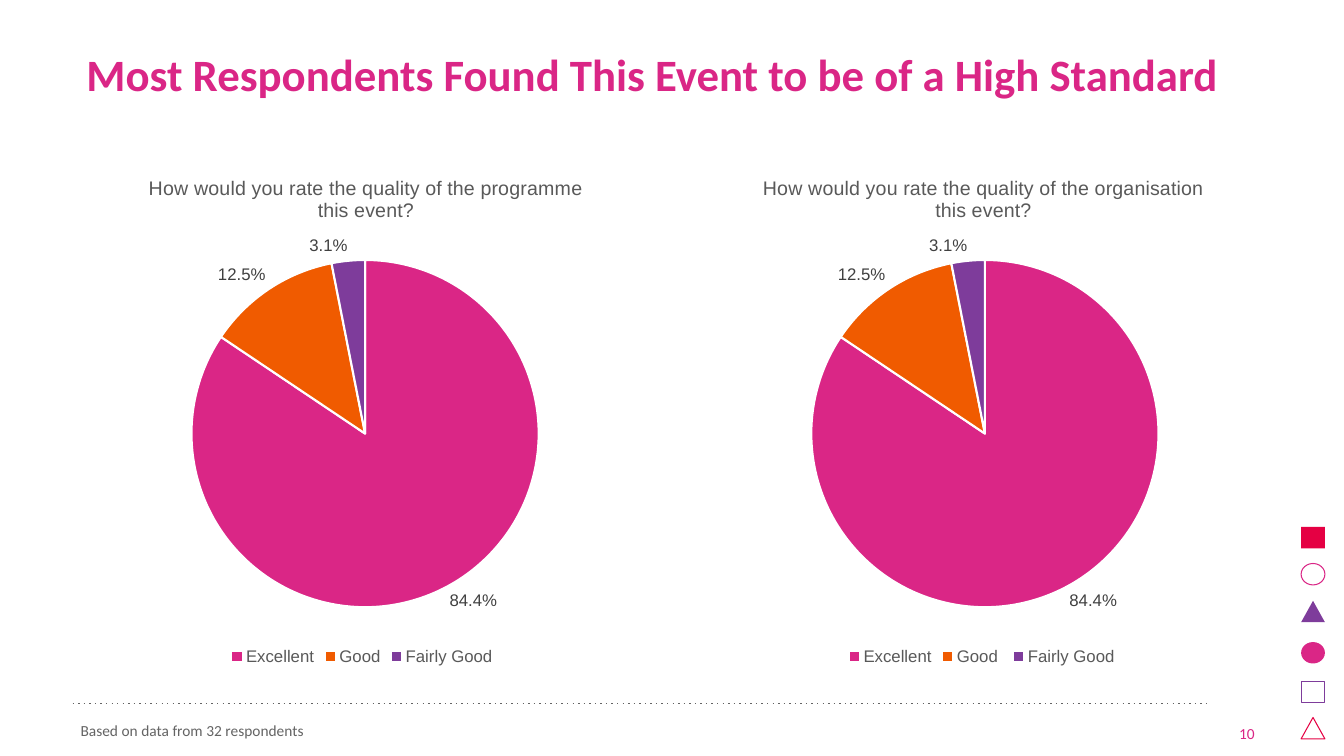
from dataclasses import dataclass

from lxml.etree import SubElement
from pptx import Presentation
from pptx.chart.data import CategoryChartData
from pptx.dml.color import RGBColor
from pptx.enum.chart import XL_CHART_TYPE as ChartType
from pptx.enum.chart import XL_LABEL_POSITION as LabelPosition
from pptx.enum.chart import XL_LEGEND_POSITION as LegendPosition
from pptx.enum.shapes import MSO_CONNECTOR as Connector
from pptx.enum.shapes import MSO_SHAPE as Preset
from pptx.enum.text import MSO_ANCHOR as Anchor
from pptx.enum.text import PP_ALIGN as Align
from pptx.oxml.ns import qn
from pptx.slide import Slide
from pptx.util import Cm, Pt

PINK, ORANGE, PURPLE, RED = "DA2686", "F05B00", "7E3C9B", "E50043"
GREY, CHART_GREY, LABEL_GREY, WHITE = "646464", "595959", "404040", "FFFFFF"


@dataclass
class Rating:
    question: str
    left: float
    title_x: float
    shares: dict[str, float]


@dataclass
class Ornament:
    preset: Preset
    top: float
    colour: str
    filled: bool


RATINGS = [
    Rating("How would you rate the quality of the programme this event?", 1.93, 0.12,
           {"Excellent": 0.844, "Good": 0.125, "Fairly Good": 0.031}),
    Rating("How would you rate the quality of the organisation this event?", 17.55, 0.11,
           {"Excellent": 0.844, "Good ": 0.125, "Fairly Good": 0.031}),
]
ORNAMENTS = [
    Ornament(Preset.RECTANGLE, 13.28, RED, True),
    Ornament(Preset.OVAL, 14.2, PINK, False),
    Ornament(Preset.ISOSCELES_TRIANGLE, 15.14, PURPLE, True),
    Ornament(Preset.OVAL, 16.18, PINK, True),
    Ornament(Preset.RECTANGLE, 17.17, PURPLE, False),
    Ornament(Preset.ISOSCELES_TRIANGLE, 18.08, RED, False),
]


def rgb(colour: str) -> RGBColor:
    return RGBColor.from_string(colour)


def style_font(font, size: float, colour: str, name: str = "Arial", bold: bool = False) -> None:
    font.name, font.size, font.bold = name, Pt(size), bold
    font.color.rgb = rgb(colour)


def add_text(slide: Slide, text: str, left: float, top: float, width: float, height: float, *,
             size: float, colour: str, bold: bool = False, anchor: Anchor = Anchor.BOTTOM,
             align: Align = Align.LEFT) -> None:
    frame = slide.shapes.add_textbox(Cm(left), Cm(top), Cm(width), Cm(height)).text_frame
    frame.word_wrap = True
    frame.vertical_anchor = anchor
    paragraph = frame.paragraphs[0]
    paragraph.alignment = align
    run = paragraph.add_run()
    run.text = text
    style_font(run.font, size, colour, "Calibri", bold)


def add_ornament(slide: Slide, ornament: Ornament) -> None:
    mark = slide.shapes.add_shape(ornament.preset, Cm(32.79), Cm(ornament.top), Cm(0.6), Cm(0.54))
    mark.shadow.inherit = False
    if ornament.filled:
        mark.fill.solid()
        mark.fill.fore_color.rgb = rgb(ornament.colour)
        mark.line.fill.background()
    else:
        mark.fill.background()
        mark.line.color.rgb = rgb(ornament.colour)
        mark.line.width = Pt(0.75)


def add_footer_rule(slide: Slide) -> None:
    rule = slide.shapes.add_connector(Connector.STRAIGHT, Cm(1.83), Cm(17.73), Cm(30.45), Cm(17.73))
    rule.line.color.rgb = rgb(GREY)
    rule.line.width = Pt(1)
    properties = rule._element.spPr
    SubElement(properties.find(qn("a:ln")), qn("a:prstDash"), val="dot")
    SubElement(properties, qn("a:effectLst"))


def place(element, **fractions: float) -> None:
    """Fix the position of a chart part as fractions of the chart's size."""
    layout = element.find(qn("c:layout"))
    if layout is None:
        layout = element.makeelement(qn("c:layout"))
        text = element.find(qn("c:tx"))
        element.insert(0 if text is None else 1, layout)
    manual = SubElement(layout, qn("c:manualLayout"))
    if "w" in fractions:
        SubElement(manual, qn("c:layoutTarget"), val="inner")
    for axis in "xy":
        SubElement(manual, qn(f"c:{axis}Mode"), val="edge")
    for key, value in fractions.items():
        SubElement(manual, qn(f"c:{key}"), val=str(value))


def add_rating_pie(slide: Slide, rating: Rating) -> None:
    data = CategoryChartData(number_format="0.0%")
    data.categories = list(rating.shares)
    data.add_series("Series 1", list(rating.shares.values()))
    chart = slide.shapes.add_chart(ChartType.PIE, Cm(rating.left), Cm(3.81), Cm(14.4), Cm(13.06),
                                   data).chart
    style_font(chart.font, 10, "000000")

    chart.has_title = True
    heading = chart.chart_title.text_frame.paragraphs[0].add_run()
    heading.text = rating.question
    style_font(heading.font, 14, CHART_GREY)
    chart.chart_title.include_in_layout = False
    place(chart.chart_title._element, x=rating.title_x, y=0.04)

    chart.has_legend = True
    chart.legend.position = LegendPosition.BOTTOM
    chart.legend.include_in_layout = False
    style_font(chart.legend.font, 12, CHART_GREY)

    plot = chart.plots[0]
    plot.vary_by_categories = True
    place(chart._chartSpace.chart.plotArea, x=0.2, y=0.21, w=0.61, h=0.67)
    for index, colour in enumerate((PINK, ORANGE, PURPLE)):
        slice_format = plot.series[0].points[index].format
        slice_format.fill.solid()
        slice_format.fill.fore_color.rgb = rgb(colour)
        slice_format.line.color.rgb = rgb(WHITE)
        slice_format.line.width = Pt(1.5)

    labels = plot.series[0].data_labels
    labels.show_value = True
    labels.number_format = "0.0%"
    labels.number_format_is_linked = False
    labels.position = LabelPosition.OUTSIDE_END
    style_font(labels.font, 12, LABEL_GREY)


def main() -> None:
    deck = Presentation()
    deck.slide_width, deck.slide_height = Cm(33.87), Cm(19.05)
    slide = deck.slides.add_slide(deck.slide_layouts[6])
    for ornament in ORNAMENTS:
        add_ornament(slide, ornament)
    add_footer_rule(slide)
    add_text(slide, "Most Respondents Found This Event to be of a High Standard",
             1.93, 0.43, 30, 2.84, size=32, colour=PINK, bold=True, anchor=Anchor.MIDDLE)
    for rating in RATINGS:
        add_rating_pie(slide, rating)
    add_text(slide, "Based on data from 32 respondents", 1.78, 17.63, 28.6, 1.14,
             size=11, colour=GREY)
    add_text(slide, "10", 30.78, 17.81, 1.09, 1.02, size=11, colour=PINK, align=Align.RIGHT)
    deck.save("out.pptx")


if __name__ == "__main__":
    main()
